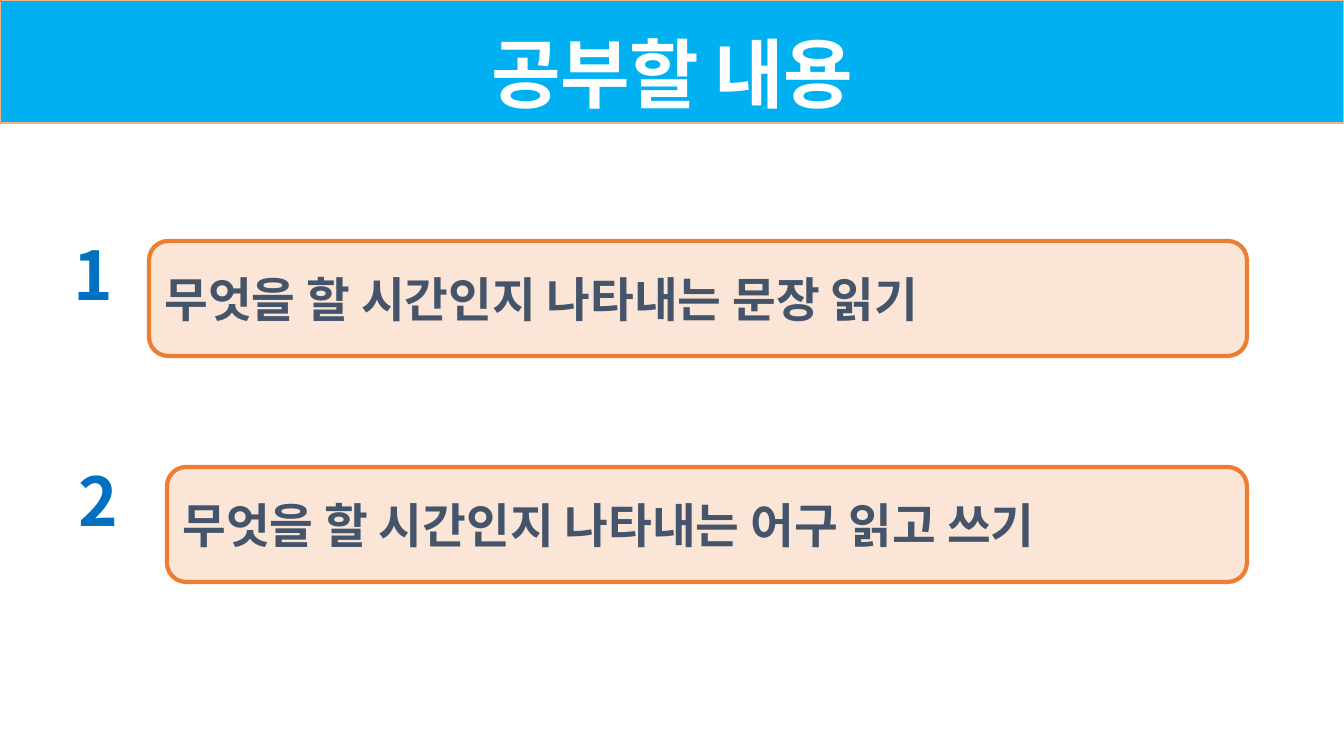
from pptx import Presentation
from pptx.dml.color import RGBColor
from pptx.enum.shapes import MSO_SHAPE as Shape
from pptx.enum.text import MSO_ANCHOR as Anchor, MSO_AUTO_SIZE as AutoSize, PP_ALIGN as Align
from pptx.oxml.ns import qn
from pptx.util import Pt
from lxml.etree import SubElement

PX = 914400 / 100.8
FONT = "Noto Sans CJK KR"
WHITE = RGBColor(0xFF, 0xFF, 0xFF)
SKY = RGBColor(0x00, 0xB0, 0xF0)
PALE_ORANGE = RGBColor(0xF4, 0xB1, 0x83)
PEACH = RGBColor(0xFB, 0xE5, 0xD6)
ORANGE = RGBColor(0xED, 0x7D, 0x31)
SLATE = RGBColor(0x44, 0x54, 0x6A)
BLUE = RGBColor(0x00, 0x70, 0xC0)


def px(*lengths):
    return [round(length * PX) for length in lengths]


def write(box, text, size, color, align=Align.LEFT):
    box.text_frame.text = text
    para = box.text_frame.paragraphs[0]
    para.alignment = align
    span = para.runs[0]
    span.font.size = Pt(size)
    span.font.bold = True
    span.font.color.rgb = color
    span.font.name = FONT
    SubElement(span.font._element, qn("a:ea"), typeface=FONT)
    return para


deck = Presentation()
deck.slide_width, deck.slide_height = px(1344, 756)
page = deck.slides.add_slide(deck.slide_layouts[6])

# Title band
band = page.shapes.add_shape(Shape.RECTANGLE, *px(0, 0, 1344, 123))
band.shadow.inherit = False
band.fill.solid()
band.fill.fore_color.rgb = SKY
band.line.color.rgb = PALE_ORANGE
band.line.width = Pt(1)
band.text_frame.vertical_anchor = Anchor.BOTTOM
heading = write(band, "공부할 내용", 54, WHITE, Align.CENTER)
heading.line_spacing = 0.85
heading.runs[0].font._element.set("spc", "-50")

# Numbered topics: number left, bar left, bar top, text
topics = [
    (64, 149, 241, "무엇을 할 시간인지 나타내는 문장 읽기"),
    (69, 167, 467, "무엇을 할 시간인지 나타내는 어구 읽고 쓰기"),
]
BAR_RIGHT = 1247
for order, (number_left, left, top, topic) in enumerate(topics, start=1):
    bar = page.shapes.add_shape(
        Shape.ROUNDED_RECTANGLE, *px(left, top, BAR_RIGHT - left, 115))
    bar.adjustments[0] = 0.167
    bar.shadow.inherit = False
    bar.fill.solid()
    bar.fill.fore_color.rgb = PEACH
    bar.line.color.rgb = ORANGE
    bar.line.width = Pt(3)
    bar.text_frame.vertical_anchor = Anchor.MIDDLE
    bar.text_frame.word_wrap = True
    write(bar, topic, 34, SLATE)

    number = page.shapes.add_textbox(*px(number_left, top - 13, 90, 92))
    number.text_frame.word_wrap = True
    number.text_frame.auto_size = AutoSize.SHAPE_TO_FIT_TEXT
    write(number, str(order), 48, BLUE)

deck.save("out.pptx")
